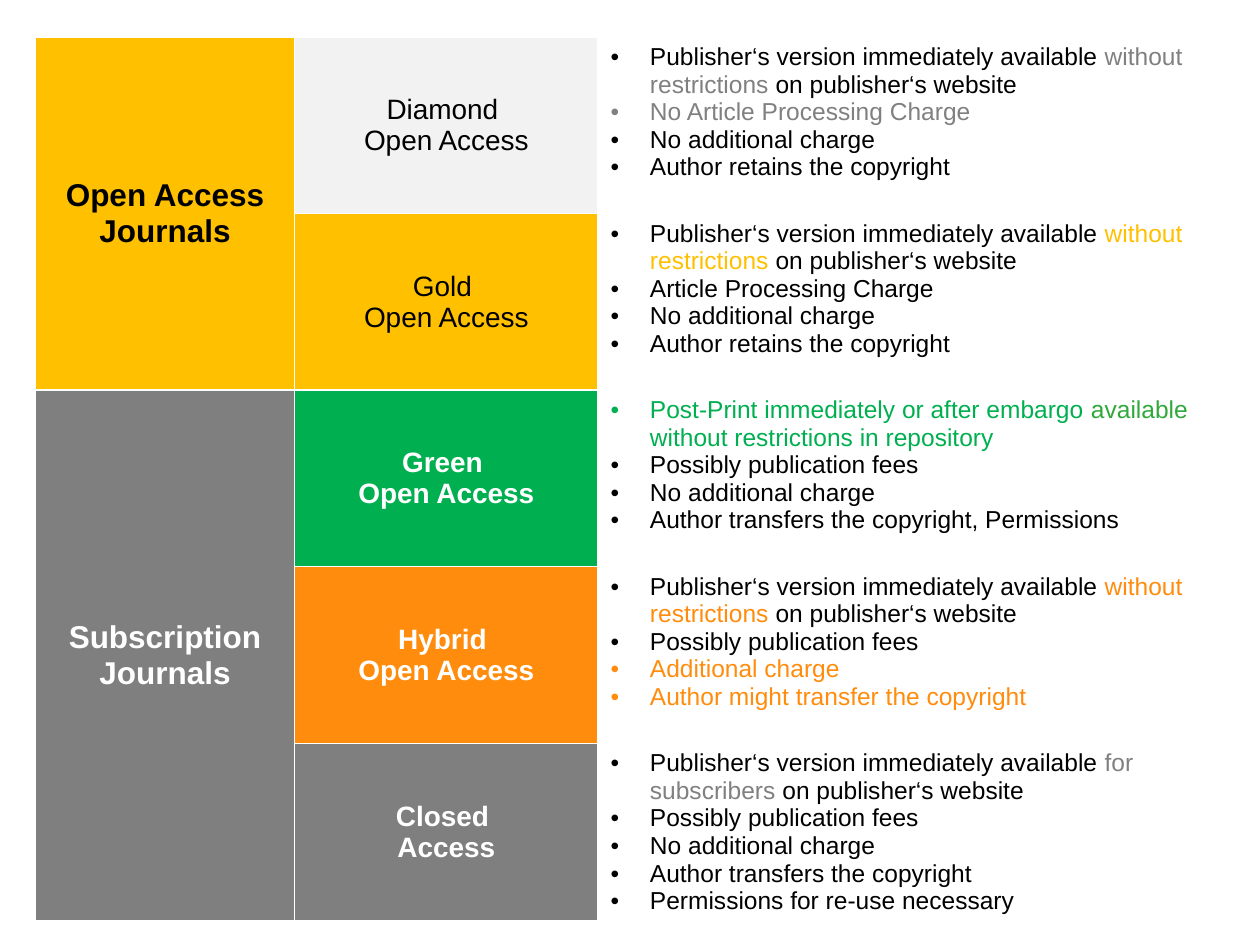
from lxml.etree import SubElement
from pptx import Presentation
from pptx.dml.color import RGBColor
from pptx.enum.text import MSO_ANCHOR, PP_ALIGN
from pptx.oxml.ns import qn
from pptx.util import Pt

BLACK = RGBColor(0x00, 0x00, 0x00)
WHITE = RGBColor(0xFF, 0xFF, 0xFF)
GOLD = RGBColor(0xFF, 0xC0, 0x00)
PALE = RGBColor(0xF2, 0xF2, 0xF2)
GREEN = RGBColor(0x00, 0xB0, 0x50)
LEAF = RGBColor(0x30, 0xA9, 0x3B)
ORANGE = RGBColor(0xFF, 0x8C, 0x0C)
GRAY = RGBColor(0x7F, 0x7F, 0x7F)
ACCENT_GRAY = RGBColor(0x80, 0x80, 0x80)

AVAILABLE = ("Publisher‘s version immediately available ", BLACK)
WEBSITE = (" on publisher‘s website", BLACK)
POSSIBLE_FEES = [("Possibly publication fees", BLACK)]
NO_CHARGE = [("No additional charge", BLACK)]
RETAINS = [("Author retains the copyright", BLACK)]

JOURNAL_GROUPS = [
    ("Open Access Journals", GOLD, BLACK, 2),
    ("Subscription Journals", GRAY, WHITE, 3),
]

ACCESS_MODELS = [
    (["Diamond ", "Open Access"], PALE, BLACK, False, [
        [AVAILABLE, ("without restrictions", ACCENT_GRAY), WEBSITE],
        [("No Article Processing Charge", ACCENT_GRAY)],
        NO_CHARGE,
        RETAINS,
    ]),
    (["Gold ", "Open Access"], GOLD, BLACK, False, [
        [AVAILABLE, ("without restrictions", GOLD), WEBSITE],
        [("Article Processing Charge", BLACK)],
        NO_CHARGE,
        RETAINS,
    ]),
    (["Green ", "Open Access"], GREEN, WHITE, True, [
        [("Post-Print immediately or after embargo ", GREEN),
         ("available ", LEAF),
         ("without restrictions in repository", GREEN)],
        POSSIBLE_FEES,
        NO_CHARGE,
        [("Author transfers the copyright, Permissions", BLACK)],
    ]),
    (["Hybrid ", "Open Access"], ORANGE, WHITE, True, [
        [AVAILABLE, ("without restrictions", ORANGE), WEBSITE],
        POSSIBLE_FEES,
        [("Additional charge", ORANGE)],
        [("Author might transfer the copyright", ORANGE)],
    ]),
    (["Closed ", "Access"], GRAY, WHITE, True, [
        [AVAILABLE, ("for subscribers", ACCENT_GRAY), WEBSITE],
        POSSIBLE_FEES,
        NO_CHARGE,
        [("Author transfers the copyright", BLACK)],
        [("Permissions for re-use necessary", BLACK)],
    ]),
]

LEFT, TOP = 20.2, 21.2
COLUMN_WIDTHS = [148.2, 173.3, 353]
ROW_HEIGHT = 100.9
BULLET_INDENT = Pt(22.5)


def outline(cell):
    properties = cell._tc.get_or_add_tcPr()
    for side in ("a:lnL", "a:lnR", "a:lnT", "a:lnB"):
        line = SubElement(properties, qn(side), w=str(Pt(1)))
        fill = SubElement(line, qn("a:solidFill"))
        SubElement(fill, qn("a:srgbClr"), val=str(WHITE))


def add_bullet(paragraph):
    properties = paragraph._p.get_or_add_pPr()
    properties.set("marL", str(BULLET_INDENT))
    properties.set("indent", str(-BULLET_INDENT))
    SubElement(properties, qn("a:buFont"), typeface="Arial")
    SubElement(properties, qn("a:buChar"), char="•")


def write(cell, lines, size, bold=False, bulleted=False):
    frame = cell.text_frame
    for index, runs in enumerate(lines):
        paragraph = frame.add_paragraph() if index else frame.paragraphs[0]
        if bulleted:
            add_bullet(paragraph)
        else:
            paragraph.alignment = PP_ALIGN.CENTER
        for text, color in runs:
            run = paragraph.add_run()
            run.text = text
            run.font.name = "Arial"
            run.font.size = Pt(size)
            run.font.bold = bold
            run.font.color.rgb = color
    cell.vertical_anchor = MSO_ANCHOR.TOP if bulleted else MSO_ANCHOR.MIDDLE


def paint(cell, color):
    cell.fill.solid()
    cell.fill.fore_color.rgb = color


def main():
    deck = Presentation()
    deck.slide_width, deck.slide_height = Pt(720), Pt(540)
    slide = deck.slides.add_slide(deck.slide_layouts[6])
    row_count = len(ACCESS_MODELS)
    overview = slide.shapes.add_table(
        row_count, len(COLUMN_WIDTHS), Pt(LEFT), Pt(TOP),
        Pt(sum(COLUMN_WIDTHS)), Pt(ROW_HEIGHT * row_count)).table
    overview.first_row = False
    overview.horz_banding = False
    for column, width in zip(overview.columns, COLUMN_WIDTHS):
        column.width = Pt(width)
    for row in overview.rows:
        row.height = Pt(ROW_HEIGHT)
    for cell in overview.iter_cells():
        outline(cell)

    first = 0
    for title, fill, color, span in JOURNAL_GROUPS:
        group = overview.cell(first, 0)
        group.merge(overview.cell(first + span - 1, 0))
        for row in range(first, first + span):
            paint(overview.cell(row, 0), fill)
        write(group, [[(title, color)]], 18, bold=True)
        first += span

    for row, (title, fill, color, bold, features) in enumerate(ACCESS_MODELS):
        model, details = overview.cell(row, 1), overview.cell(row, 2)
        paint(model, fill)
        write(model, [[(line, color)] for line in title], 16, bold)
        paint(details, WHITE)
        write(details, features, 14, bulleted=True)

    deck.save("out.pptx")


if __name__ == "__main__":
    main()
